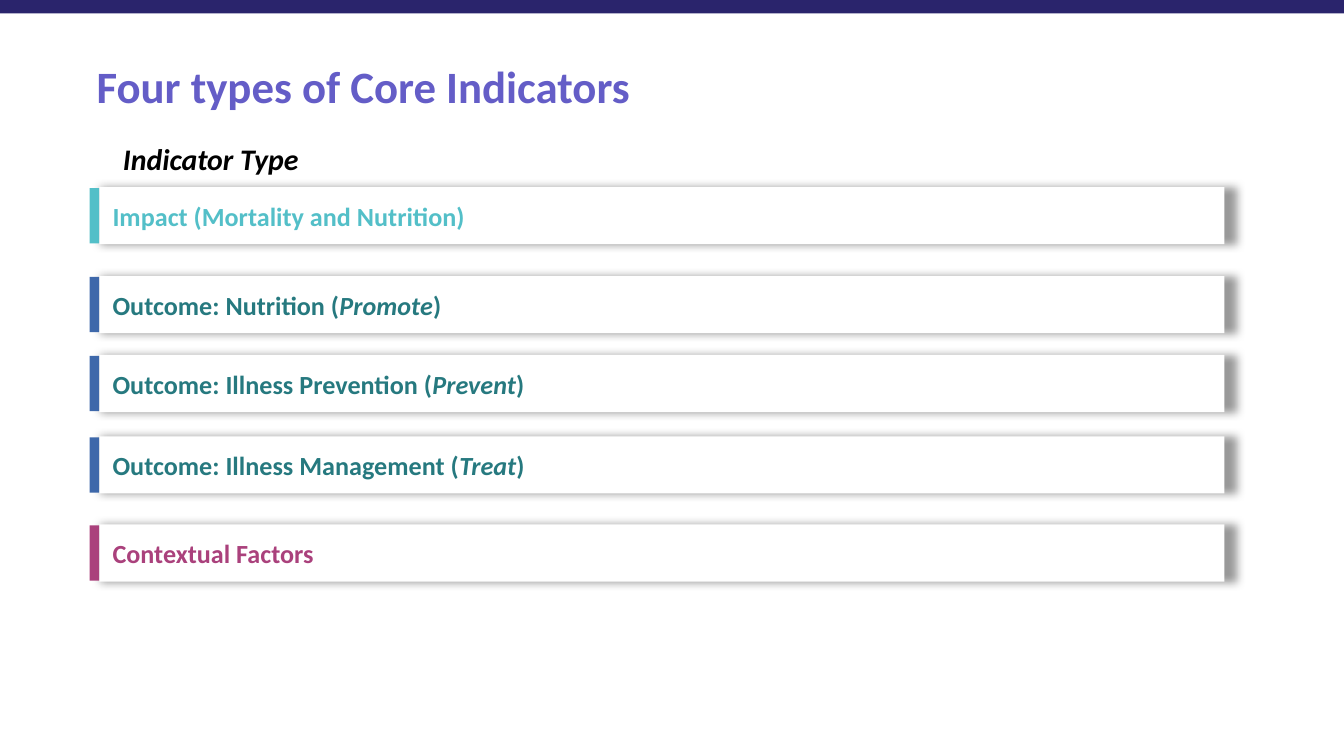
from dataclasses import dataclass

from lxml.etree import SubElement
from pptx import Presentation
from pptx.dml.color import RGBColor as Color
from pptx.enum.shapes import MSO_SHAPE as Shape
from pptx.enum.text import MSO_ANCHOR as Anchor, MSO_AUTO_SIZE as AutoSize, PP_ALIGN as Align
from pptx.oxml.ns import qn
from pptx.util import Pt


@dataclass(frozen=True)
class Theme:
    font: str = "Calibri"
    title_size: float = 24
    heading_size: float = 16
    label_size: float = 14
    banner: str = "2A246C"
    title: str = "645DC7"
    black: str = "000000"
    white: str = "FFFFFF"
    impact: str = "53BFC8"
    outcome: str = "26797F"
    outcome_bar: str = "3E68AA"
    context: str = "AA417C"


def apply(target, values):
    for name, value in values.items():
        setattr(target, name, value)


class SlideBuilder:
    def __init__(self, page, theme):
        self.page = page
        self.theme = theme

    def fill_text(self, frame, spans, size, color, align=Align.LEFT, inset=(7.2, 3.6)):
        side, edge = map(Pt, inset)
        apply(frame, dict(word_wrap=True, auto_size=AutoSize.NONE, vertical_anchor=Anchor.MIDDLE,
                          margin_left=side, margin_right=side, margin_top=edge, margin_bottom=edge))
        para = frame.paragraphs[0]
        para.alignment = align
        for text, italic in spans:
            span = para.add_run()
            span.text = text
            apply(span.font, dict(name=self.theme.font, size=Pt(size), bold=True, italic=italic))
            span.font.color.rgb = Color.from_string(color)

    def title(self, text, *place):
        box = self.page.shapes.title
        apply(box, dict(zip(("left", "top", "width", "height"), map(Pt, place))))
        self.fill_text(box.text_frame, [(text, False)], self.theme.title_size, self.theme.title,
                       inset=(7.2, 7.2))

    def heading(self, text, *place):
        box = self.page.shapes.add_textbox(*map(Pt, place))
        self.fill_text(box.text_frame, [(text, True)], self.theme.heading_size, self.theme.black,
                       Align.CENTER)

    def block(self, shapes, color, *place):
        box = shapes.add_shape(Shape.RECTANGLE, *map(Pt, place))
        box.shadow.inherit = False
        box.fill.solid()
        box.fill.fore_color.rgb = Color.from_string(color)
        box.line.fill.background()
        return box

    def banner(self, *place):
        self.block(self.page.shapes, self.theme.banner, *place)

    def glow(self, box):
        effects = box.element.spPr.find(qn("a:effectLst"))
        shadow = SubElement(effects, qn("a:outerShdw"), blurRad=str(Pt(5)), dist="0", dir="0",
                            sx="101000", sy="101000", algn="l", rotWithShape="0")
        tint = SubElement(shadow, qn("a:srgbClr"), val=self.theme.black)
        SubElement(tint, qn("a:alpha"), val="40000")

    def indicator(self, top, spans, text_color, bar_color):
        shapes = self.page.shapes.add_group_shape().shapes
        card = self.block(shapes, self.theme.white, 53.2, top, 602.8, 30.6)
        self.glow(card)
        self.fill_text(card.text_frame, spans, self.theme.label_size, text_color)
        self.block(shapes, bar_color, 48, top + 0.5, 5.2, 29.6)


def main():
    deck = Presentation()
    apply(deck, dict(slide_width=Pt(720), slide_height=Pt(405)))
    theme = Theme()
    slide = SlideBuilder(deck.slides.add_slide(deck.slide_layouts[5]), theme)

    slide.banner(0, 0, 720, 7.2)
    slide.title("Four types of Core Indicators", 44.6, 23, 630.7, 45.4)
    slide.heading("Indicator Type", 53.2, 71.6, 119.5, 26.6)

    slide.indicator(100.3, [("Impact (Mortality and Nutrition)", False)],
                    theme.impact, theme.impact)
    outcomes = [
        (147.9, "Nutrition", "Promote"),
        (190.2, "Illness Prevention", "Prevent"),
        (233.8, "Illness Management", "Treat"),
    ]
    for top, topic, action in outcomes:
        spans = [(f"Outcome: {topic} (", False), (action, True), (")", False)]
        slide.indicator(top, spans, theme.outcome, theme.outcome_bar)
    slide.indicator(281, [("Contextual Factors", False)], theme.context, theme.context)

    deck.save("out.pptx")


if __name__ == "__main__":
    main()
